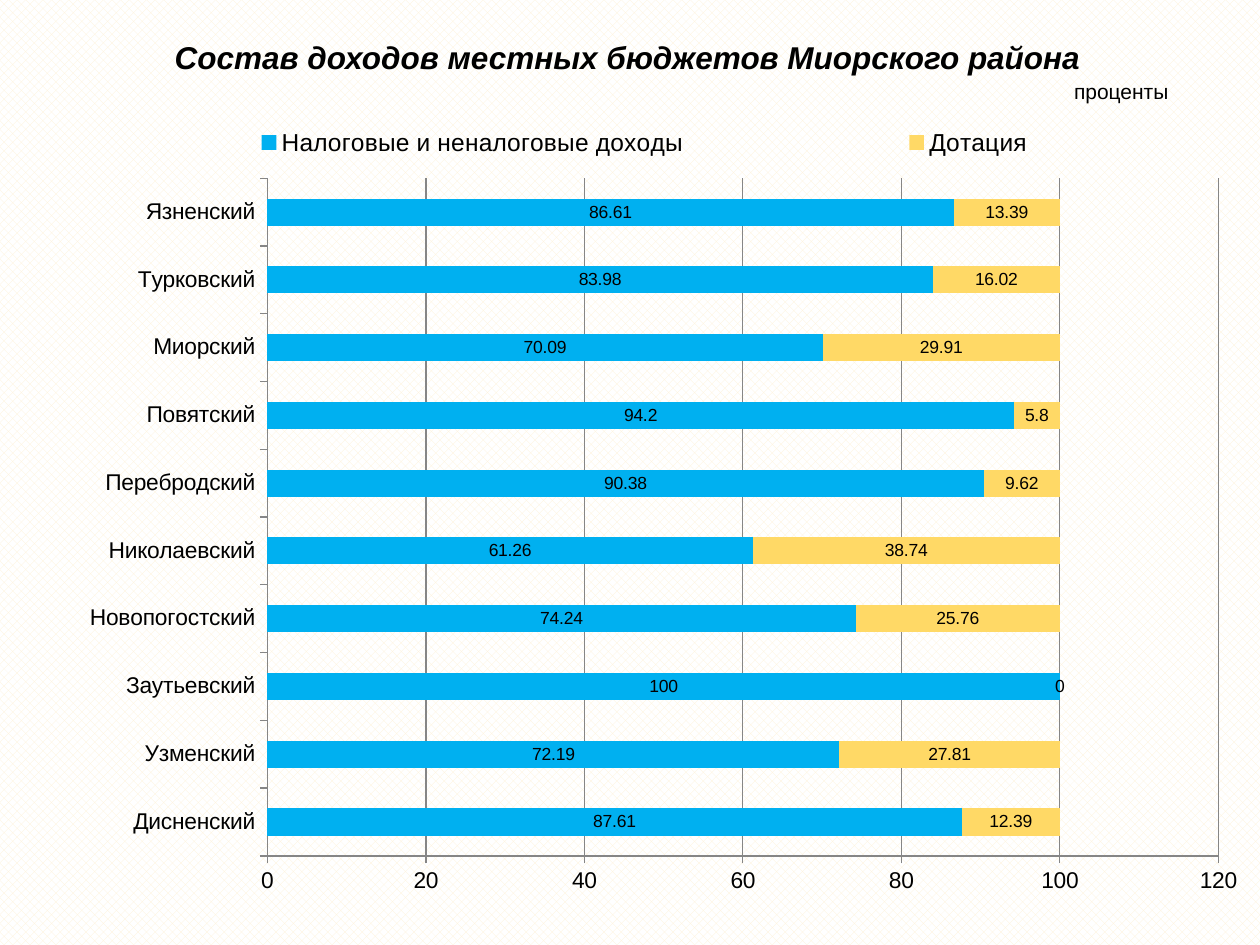
from dataclasses import dataclass

from lxml import etree
from pptx import Presentation
from pptx import util as u
from pptx.chart.data import CategoryChartData
from pptx.dml.color import RGBColor
from pptx.enum import chart as charts, dml, shapes, text
from pptx.oxml.ns import qn


@dataclass(frozen=True)
class Theme:
    font: str = "Arial"
    ink: str = "000000"
    rule: str = "868686"
    paper: str = "FFFFFF"
    weave: str = "FEF1D6"
    taxes: str = "00B0F0"
    grant: str = "FFD966"
    title: int = 18
    unit: int = 12
    axis: int = 13
    legend: int = 14
    label: int = 10


THEME = Theme()
WIDTH, HEIGHT = u.Inches(10), u.Inches(7.5)

INCOME = {
    "Дисненский": (87.61, 12.39),
    "Узменский": (72.19, 27.81),
    "Заутьевский": (100, 0),
    "Новопогостский": (74.24, 25.76),
    "Николаевский": (61.26, 38.74),
    "Перебродский": (90.38, 9.62),
    "Повятский": (94.2, 5.8),
    "Миорский": (70.09, 29.91),
    "Турковский": (83.98, 16.02),
    "Язненский": (86.61, 13.39),
}
SERIES = (("Налоговые и неналоговые доходы", THEME.taxes),
          ("Дотация", THEME.grant))


def color(value):
    return RGBColor.from_string(value)


def area(left, top, width, height):
    return (u.Emu(int(WIDTH * left)), u.Emu(int(HEIGHT * top)),
            u.Emu(int(WIDTH * width)), u.Emu(int(HEIGHT * height)))


def style_font(font, size, strong=False):
    font.name = THEME.font
    font.size = u.Pt(size)
    font.color.rgb = color(THEME.ink)
    font.bold = font.italic = strong


def write_line(box, words, size, strong=False, spacing=1.0):
    frame = box.text_frame
    frame.word_wrap = True
    frame.vertical_anchor = text.MSO_ANCHOR.MIDDLE
    para = frame.paragraphs[0]
    para.alignment = text.PP_ALIGN.CENTER
    para.line_spacing = spacing
    span = para.add_run()
    span.text = words
    style_font(span.font, size, strong)


def paint_background(page):
    fill = page.background.fill
    fill.patterned()
    fill.pattern = dml.MSO_PATTERN.PERCENT_50
    fill.fore_color.rgb = color(THEME.weave)
    fill.back_color.rgb = color(THEME.paper)


def add_title(page, words):
    box = page.shapes.add_textbox(*area(0.067, 0.039, 0.862, 0.048))
    write_line(box, words, THEME.title, strong=True, spacing=0.9)


def add_unit(page, words):
    box = page.shapes.add_shape(shapes.MSO_SHAPE.ROUNDED_RECTANGLE,
                                *area(0.823, 0.08, 0.134, 0.032))
    box.shadow.inherit = False
    box.fill.background()
    box.line.fill.background()
    write_line(box, words, THEME.unit)


def set_layout(element, index, shares, inner=False):
    for old in element.findall(qn("c:layout")):
        element.remove(old)
    layout = etree.Element(qn("c:layout"))
    manual = etree.SubElement(layout, qn("c:manualLayout"))
    settings = [("layoutTarget", "inner")] if inner else []
    settings += [("xMode", "edge"), ("yMode", "edge")]
    settings += zip("xywh", shares)
    for name, value in settings:
        etree.SubElement(manual, qn(f"c:{name}")).set("val", str(value))
    element.insert(index, layout)


def style_axis(axis):
    axis.major_tick_mark = charts.XL_TICK_MARK.OUTSIDE
    axis.minor_tick_mark = charts.XL_TICK_MARK.NONE
    axis.format.line.color.rgb = color(THEME.rule)
    axis.format.line.width = u.Pt(0.75)
    style_font(axis.tick_labels.font, THEME.axis)


def style_series(series, fill):
    series.format.fill.solid()
    series.format.fill.fore_color.rgb = color(fill)
    labels = series.data_labels
    labels.show_value = True
    labels.position = charts.XL_LABEL_POSITION.CENTER
    style_font(labels.font, THEME.label)


def add_income_chart(page):
    data = CategoryChartData()
    data.categories = list(INCOME)
    for (name, _), values in zip(SERIES, zip(*INCOME.values())):
        data.add_series(name, values)
    chart = page.shapes.add_chart(charts.XL_CHART_TYPE.BAR_STACKED,
                                  *area(0.035, 0.112, 0.953, 0.861), data).chart
    chart.has_title = False
    style_font(chart.font, THEME.title)

    plot = chart.plots[0]
    plot.gap_width, plot.overlap = 150, 100
    plot.vary_by_categories = False
    for series, (_, fill) in zip(plot.series, SERIES):
        style_series(series, fill)

    scale = chart.value_axis
    style_axis(chart.category_axis)
    style_axis(scale)
    scale.minimum_scale, scale.maximum_scale, scale.major_unit = 0, 120, 20
    scale.has_major_gridlines = True
    scale.major_gridlines.format.line.color.rgb = color(THEME.rule)
    scale.major_gridlines.format.line.width = u.Pt(0.75)

    chart.has_legend = True
    legend = chart.legend
    legend.position = charts.XL_LEGEND_POSITION.TOP
    legend.include_in_layout = False
    style_font(legend.font, THEME.legend)
    set_layout(legend._element, 1, (0, 0.01, 1, 0.07))
    set_layout(chart._chartSpace.chart.plotArea, 0,
               (0.186, 0.089, 0.792, 0.833), inner=True)


def main():
    deck = Presentation()
    deck.slide_width, deck.slide_height = WIDTH, HEIGHT
    page = deck.slides.add_slide(deck.slide_layouts[6])
    paint_background(page)
    add_title(page, "Состав доходов местных бюджетов Миорского района")
    add_unit(page, "проценты")
    add_income_chart(page)
    deck.save("out.pptx")


if __name__ == "__main__":
    main()
